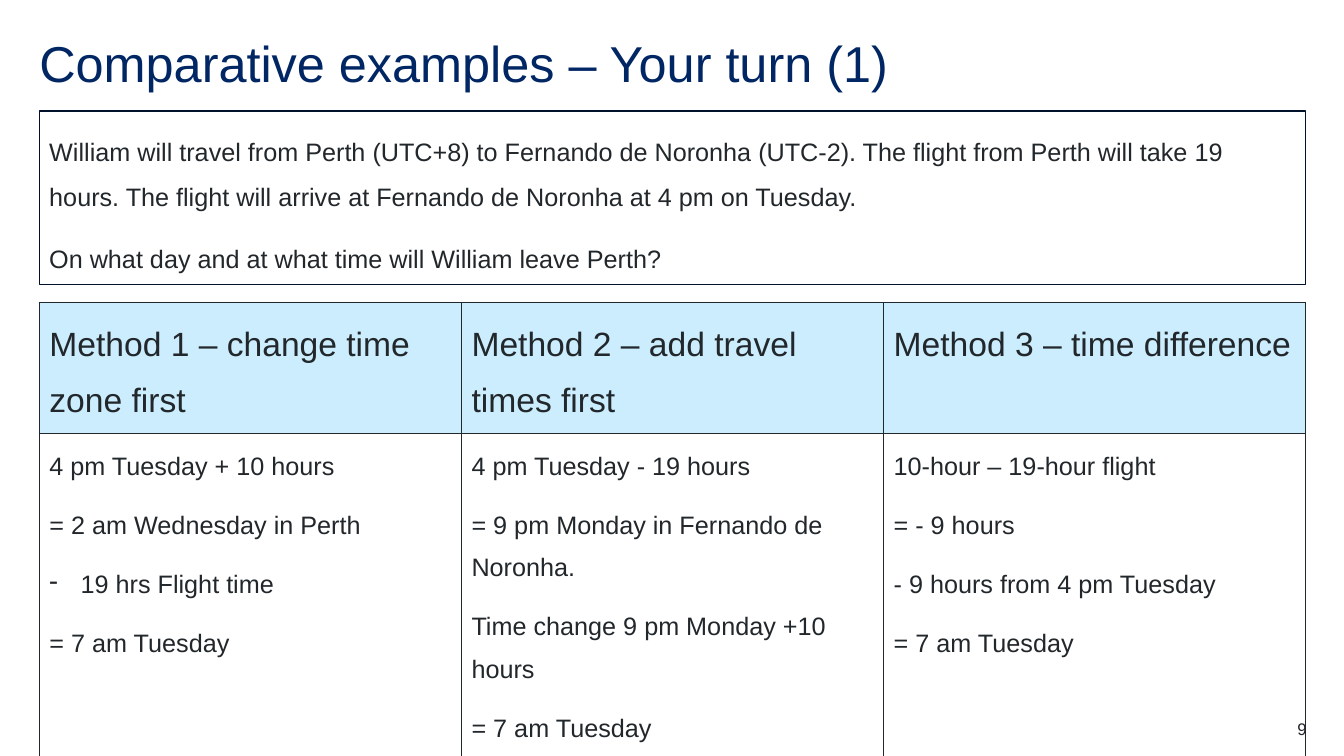
from lxml import etree
from pptx import Presentation
from pptx import util as u
from pptx.dml.color import RGBColor
from pptx.enum import shapes, text
from pptx.oxml.ns import qn

TITLE = "Comparative examples – Your turn (1)"
TASK = [
    "William will travel from Perth (UTC+8) to Fernando de Noronha (UTC-2). "
    "The flight from Perth will take 19 hours. "
    "The flight will arrive at Fernando de Noronha at 4 pm on Tuesday.",
    "On what day and at what time will William leave Perth?",
]
# Heading and steps of each method; a (mark, text) pair is a bulleted step
METHODS = [
    ("Method 1 – change time zone first",
     ["4 pm Tuesday + 10 hours", "= 2 am Wednesday in Perth",
      ("-", "19 hrs Flight time"), "= 7 am Tuesday"]),
    ("Method 2 – add travel times first",
     ["4 pm Tuesday - 19 hours", "= 9 pm Monday in Fernando de Noronha.",
      "Time change 9 pm Monday +10 hours", "= 7 am Tuesday"]),
    ("Method 3 – time difference",
     ["10-hour – 19-hour flight", "= - 9 hours",
      "- 9 hours from 4 pm Tuesday", "= 7 am Tuesday"]),
]
PAGE = "9"
INK, NAVY, EDGE, SKY = "22272B", "002664", "00112C", "CBEDFD"
LEFT, WIDE = 0.39, 12.56
ROWS = [0.52, 3.59]
BODY = dict(gap=1.5, after=12)


def color(code):
    return RGBColor.from_string(code)


def box(*dims):
    return [u.Inches(d) for d in dims]


def bullet(para, mark, indent=0.31):
    props = para._p.get_or_add_pPr()
    props.set("marL", str(u.Inches(indent)))
    props.set("indent", str(-u.Inches(indent)))
    etree.SubElement(props, qn("a:buChar")).set("char", mark)


def write(frame, lines, size=18, ink=INK, gap=None, after=None,
          align=text.PP_ALIGN.LEFT):
    frame.word_wrap = True
    for i, line in enumerate(lines):
        para = frame.add_paragraph() if i else frame.paragraphs[0]
        if isinstance(line, tuple):
            mark, line = line
            bullet(para, mark)
        para.alignment = align
        if gap:
            para.line_spacing = gap
        if after:
            para.space_after = u.Pt(after)
        run = para.add_run()
        run.text = line
        run.font.name, run.font.size = "Arial", u.Pt(size)
        run.font.color.rgb = color(ink)


def label(slide, dims, line, **style):
    frame = slide.shapes.add_textbox(*box(*dims)).text_frame
    frame.margin_left = frame.margin_right = 0
    frame.margin_top = frame.margin_bottom = 0
    write(frame, [line], **style)


def border(cell, ink=INK, width=1):
    props = cell._tc.get_or_add_tcPr()
    for i, side in enumerate(("a:lnL", "a:lnR", "a:lnT", "a:lnB")):
        line = etree.Element(qn(side), w=str(u.Pt(width)))
        fill = etree.SubElement(line, qn("a:solidFill"))
        etree.SubElement(fill, qn("a:srgbClr"), val=ink)
        props.insert(i, line)


deck = Presentation()
deck.slide_width, deck.slide_height = box(13.33, 7.5)
slide = deck.slides.add_slide(deck.slide_layouts[6])

# Title
label(slide, (LEFT, 0.39, WIDE, 0.6), TITLE, size=36, ink=NAVY, gap=0.9)

# Task panel
panel = slide.shapes.add_shape(shapes.MSO_SHAPE.RECTANGLE,
                               *box(LEFT, 1.1, WIDE, 1.72))
panel.shadow.inherit = False
panel.fill.background()
panel.line.color.rgb = color(EDGE)
panel.line.width = u.Pt(1)
panel.text_frame.vertical_anchor = text.MSO_ANCHOR.MIDDLE
write(panel.text_frame, TASK, **BODY)

# Methods table
table = slide.shapes.add_table(
    len(ROWS), len(METHODS), *box(LEFT, 3, WIDE, sum(ROWS))).table
table.first_row = table.horz_banding = False
for row, high in zip(table.rows, ROWS):
    row.height = u.Inches(high)
for col, (head, steps) in enumerate(METHODS):
    table.columns[col].width = u.Inches(WIDE / len(METHODS))
    top, base = table.cell(0, col), table.cell(1, col)
    write(top.text_frame, [head], size=24, **BODY)
    write(base.text_frame, steps, **BODY)
    top.fill.solid()
    top.fill.fore_color.rgb = color(SKY)
    base.fill.background()
    border(top)
    border(base)

# Page number
label(slide, (12.17, 7.13, 0.79, 0.2), PAGE, size=12,
      align=text.PP_ALIGN.RIGHT)

deck.save("out.pptx")
